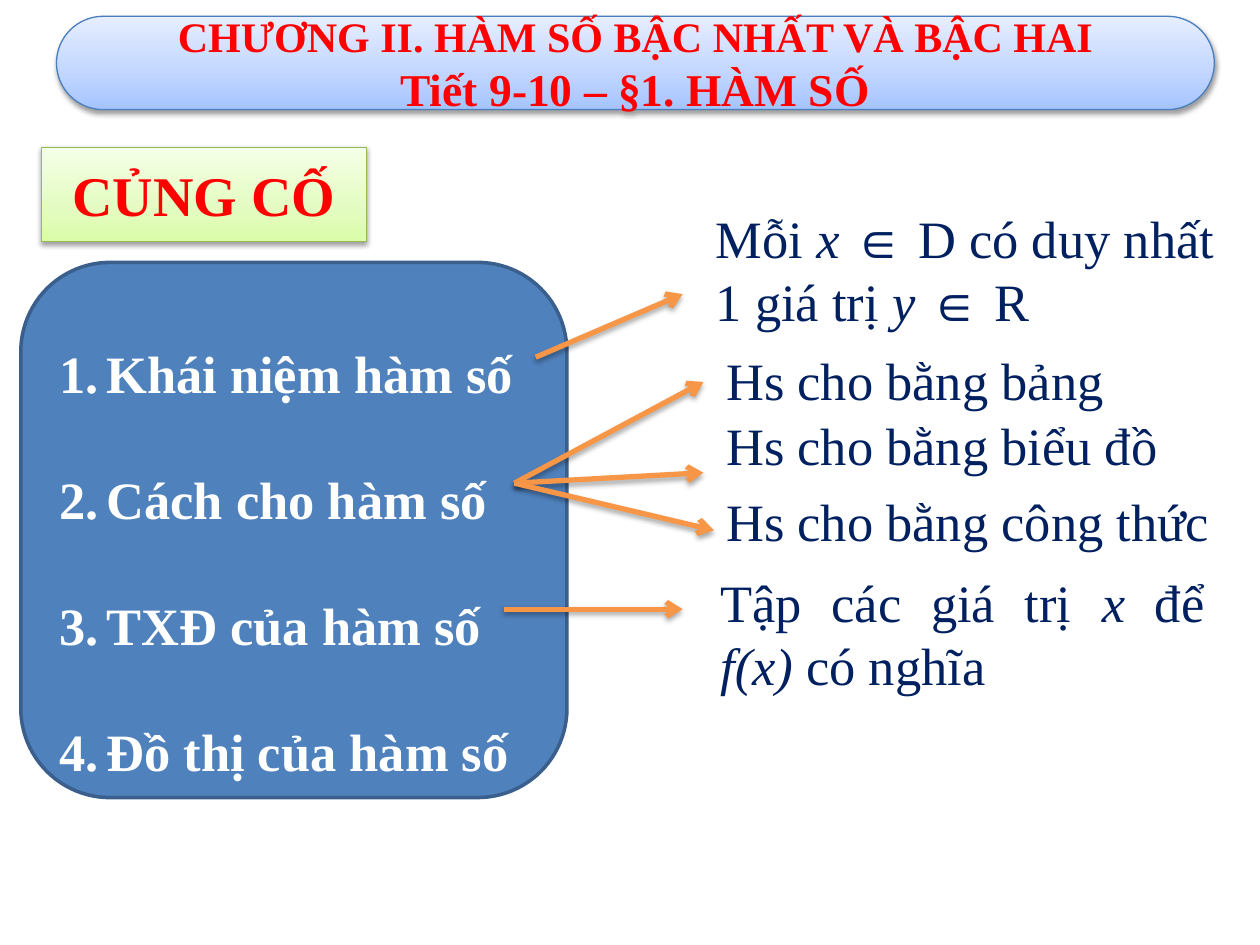
from lxml import etree
from pptx import Presentation
from pptx import util as u
from pptx.dml.color import RGBColor
from pptx.enum import shapes, text
from pptx.oxml.ns import qn

FONT = "Times New Roman"
RED, NAVY, WHITE, ORANGE = "FF0000", "002060", "FFFFFF", "F79646"


def rgb(value):
    return RGBColor.from_string(value)


def sub(parent, tag, **attrs):
    return etree.SubElement(parent, qn(tag), {k: str(v) for k, v in attrs.items()})


def style_run(r, size, color, bold=False, italic=False):
    r.font.name, r.font.size = FONT, u.Pt(size)
    r.font.bold, r.font.italic = bold, italic
    r.font.color.rgb = rgb(color)


def add_shadow(spPr, opacity, distance):
    effects = spPr.find(qn("a:effectLst"))
    if effects is None:
        effects = sub(spPr, "a:effectLst")
    shadow = sub(effects, "a:outerShdw", blurRad=u.Pt(3.1), dist=u.Pt(distance),
                 dir=5400000, rotWithShape=0)
    sub(sub(shadow, "a:srgbClr", val="000000"), "a:alpha", val=opacity * 1000)


def fill_gradient(sp, colors):
    sp.fill.gradient()
    sp.fill.gradient_angle = 90
    stops = sp._element.spPr.find(qn("a:gradFill")).find(qn("a:gsLst"))
    for old in list(stops):
        stops.remove(old)
    for position, color in zip((0, 35, 100), colors):
        sub(sub(stops, "a:gs", pos=position * 1000), "a:srgbClr", val=color)


def add_box(s, kind, box, line, width):
    sp = s.shapes.add_shape(kind, *map(u.Cm, box))
    sp.shadow.inherit = False
    sp.line.color.rgb = rgb(line)
    sp.line.width = u.Pt(width)
    sp.text_frame.vertical_anchor = text.MSO_ANCHOR.MIDDLE
    return sp


def add_banner(s, kind, box, line, colors, lines):
    sp = add_box(s, kind, box, line, 0.75)
    fill_gradient(sp, colors)
    add_shadow(sp._element.spPr, 38, 1.6)
    tf = sp.text_frame
    tf.text = "\n".join(words for words, _ in lines)
    for p, (_, size) in zip(tf.paragraphs, lines):
        p.alignment = text.PP_ALIGN.CENTER
        style_run(p.runs[0], size, RED, bold=True)
    return sp


def add_topics(s, box, topics):
    sp = add_box(s, shapes.MSO_SHAPE.ROUNDED_RECTANGLE, box, "3A5F8C", 2)
    sp.fill.solid()
    sp.fill.fore_color.rgb = rgb("4F81BD")
    tf = sp.text_frame
    tf.text = "\n".join(topics)
    indent = u.Cm(0.95)
    for p in tf.paragraphs:
        p.alignment = text.PP_ALIGN.LEFT
        p.line_spacing = 2.0
        pPr = p._p.get_or_add_pPr()
        pPr.set("marL", str(indent))
        pPr.set("indent", str(-indent))
        sub(pPr, "a:buFont", typeface="+mj-lt")
        sub(pPr, "a:buAutoNum", type="arabicPeriod")
        style_run(p.runs[0], 30, WHITE, bold=True)


def add_note(s, box, parts, align=text.PP_ALIGN.LEFT):
    tf = s.shapes.add_textbox(*map(u.Cm, box)).text_frame
    tf.word_wrap = True
    tf.auto_size = text.MSO_AUTO_SIZE.SHAPE_TO_FIT_TEXT
    p = tf.paragraphs[0]
    p.alignment = align
    for i, words in enumerate(parts):
        r = p.add_run()
        r.text = words
        style_run(r, 30, NAVY, italic=i % 2 == 1)


def add_arrow(s, start, end):
    c = s.shapes.add_connector(shapes.MSO_CONNECTOR.STRAIGHT,
                               *map(u.Cm, start + end))
    c.line.color.rgb = rgb(ORANGE)
    c.line.width = u.Pt(3)
    sub(c.line._get_or_add_ln(), "a:tailEnd", type="arrow")
    add_shadow(c._element.spPr, 35, 1.8)


def main():
    prs = Presentation()
    prs.slide_width, prs.slide_height = u.Cm(25.4), u.Cm(19.05)
    s = prs.slides.add_slide(prs.slide_layouts[6])

    add_banner(s, shapes.MSO_SHAPE.RECTANGLE, (0.84, 2.97, 6.55, 1.9), "98B955",
               ("DAFDA7", "E4FCC2", "F5FFE7"), [("CỦNG CỐ", 32)])
    add_topics(s, (0.42, 5.29, 11.01, 10.79),
               ["Khái niệm hàm số", "Cách cho hàm số",
                "TXĐ của hàm số", "Đồ thị của hàm số"])

    add_arrow(s, (10.8, 7.2), (13.76, 5.93))
    for end in ((14.18, 7.7), (14.18, 9.53), (14.39, 10.69)):
        add_arrow(s, (10.37, 9.74), end)
    add_arrow(s, (10.16, 12.28), (13.76, 12.28))

    add_note(s, (14.18, 4.02, 10.64, 2.82),
             ["Mỗi ", "x ", "∈ D có duy nhất 1 giá trị ", "y", " ∈ R"])
    for top, width, words in ((6.9, 8.74, "Hs cho bằng bảng"),
                              (8.2, 10.41, "Hs cho bằng biểu đồ"),
                              (9.74, 10.26, "Hs cho bằng công thức")):
        add_note(s, (14.39, top, width, 1.55), [words])
    add_note(s, (14.27, 11.37, 10.26, 2.82),
             ["Tập các giá trị ", "x ", "để ", "f(x) ", "có nghĩa"],
             text.PP_ALIGN.JUSTIFY)

    header = add_banner(s, shapes.MSO_SHAPE.ROUNDED_RECTANGLE,
                        (1.14, 0.33, 23.34, 1.88), "4B7EBC",
                        ("A4C4FF", "BFD4FF", "E6EEFF"),
                        [("CHƯƠNG II. HÀM SỐ BẬC NHẤT VÀ BẬC HAI", 24),
                         ("Tiết 9-10 – §1. HÀM SỐ", 26)])
    header.adjustments[0] = 0.5
    header.text_frame.word_wrap = False

    prs.save("out.pptx")


if __name__ == "__main__":
    main()
